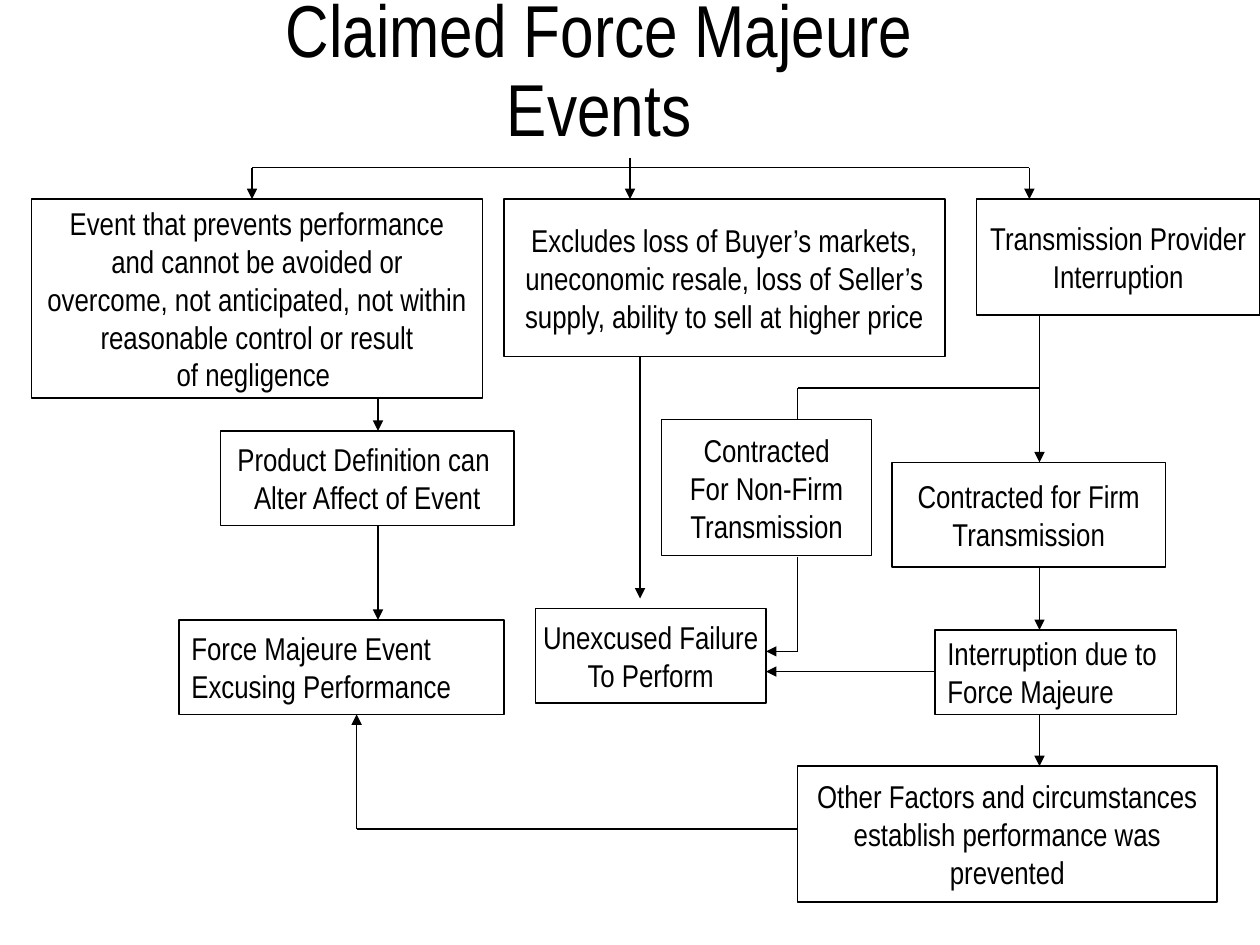
from dataclasses import dataclass

import lxml.etree
import pptx
import pptx.dml.color
import pptx.enum.shapes
import pptx.enum.text
import pptx.oxml.ns
import pptx.util
from pptx.util import Inches

Align = pptx.enum.text.PP_ALIGN


@dataclass(frozen=True)
class Theme:
    font: str = "Arial Narrow"
    ink: pptx.dml.color.RGBColor = pptx.dml.color.RGBColor(0, 0, 0)
    paper: pptx.dml.color.RGBColor = pptx.dml.color.RGBColor(255, 255, 255)
    title_size: float = 42
    body_size: float = 18
    line_width: float = 0.75


@dataclass(frozen=True)
class Box:
    left: float
    top: float
    width: float
    height: float
    paragraphs: tuple[str, ...]
    alignment: Align = Align.CENTER


@dataclass(frozen=True)
class Route:
    points: tuple[tuple[float, float], ...]
    arrow: bool = True


THEME = Theme()

BOXES = (
    Box(0.25, 1.58, 3.58, 1.58, (
        "Event that prevents performance",
        "and cannot be avoided or",
        "overcome, not anticipated, not within",
        "reasonable control or result",
        "of negligence ",
    )),
    Box(4, 1.58, 3.5, 1.25, (
        "Excludes loss of Buyer’s markets,",
        "uneconomic resale, loss of Seller’s",
        "supply, ability to sell at higher price",
    )),
    Box(7.75, 1.58, 2.25, 0.92, ("Transmission Provider", "Interruption")),
    Box(1.75, 3.42, 2.33, 0.75, ("Product Definition can ", "Alter Affect of Event")),
    Box(4.25, 4.83, 1.83, 0.75, ("Unexcused Failure", "To Perform")),
    Box(1.42, 4.92, 2.58, 0.75, ("Force Majeure Event", "Excusing Performance"), Align.LEFT),
    Box(7.42, 5, 1.92, 0.67, ("Interruption due to", "Force Majeure"), Align.LEFT),
    Box(7.08, 3.67, 2.17, 0.83, ("Contracted for Firm", "Transmission")),
    Box(6.33, 6.08, 3.33, 1.08, (
        "Other Factors and circumstances\nestablish performance was",
        "prevented",
    )),
    Box(5.25, 3.33, 1.67, 1.08, ("Contracted", "For Non-Firm", "Transmission")),
)

ROUTES = (
    Route(((5, 1.33), (2, 1.33), (2, 1.58))),
    Route(((5, 1.33), (8.17, 1.33), (8.17, 1.58))),
    Route(((5, 1.25), (5, 1.58))),
    Route(((3, 3.17), (3, 3.42))),
    Route(((3, 4.17), (3, 4.92))),
    Route(((5.08, 2.83), (5.08, 4.75))),
    Route(((8.25, 2.5), (8.25, 3.67))),
    Route(((8.25, 3.08), (6.33, 3.08), (6.33, 3.33)), arrow=False),
    Route(((6.33, 4.42), (6.33, 5.17), (6.08, 5.17))),
    Route(((8.25, 4.5), (8.25, 5))),
    Route(((7.42, 5.33), (6.08, 5.33))),
    Route(((8.25, 5.67), (8.25, 6.08))),
    Route(((6.33, 6.58), (2.83, 6.58), (2.83, 5.67))),
)


def write_paragraph(paragraph, text: str, size: float, alignment: Align) -> None:
    paragraph.alignment = alignment
    for index, line in enumerate(text.split("\n")):
        if index:
            paragraph.add_line_break()
        run = paragraph.add_run()
        run.text = line
        run.font.name = THEME.font
        run.font.size = pptx.util.Pt(size)
        run.font.color.rgb = THEME.ink


def prepare_frame(text_frame) -> None:
    text_frame.word_wrap = False
    text_frame.auto_size = pptx.enum.text.MSO_AUTO_SIZE.NONE
    text_frame.vertical_anchor = pptx.enum.text.MSO_ANCHOR.MIDDLE


def add_title(slide, text: str) -> None:
    title = slide.shapes.title
    title.left, title.top = Inches(1.42), Inches(0.08)
    title.width, title.height = Inches(6.67), Inches(1)
    prepare_frame(title.text_frame)
    paragraph = title.text_frame.paragraphs[0]
    paragraph.line_spacing = 0.9
    write_paragraph(paragraph, text, THEME.title_size, Align.CENTER)


def add_box(slide, box: Box) -> None:
    shape = slide.shapes.add_shape(
        pptx.enum.shapes.MSO_SHAPE.RECTANGLE,
        Inches(box.left), Inches(box.top), Inches(box.width), Inches(box.height),
    )
    shape.shadow.inherit = False
    shape.fill.solid()
    shape.fill.fore_color.rgb = THEME.paper
    shape.line.color.rgb = THEME.ink
    shape.line.width = pptx.util.Pt(THEME.line_width)
    text_frame = shape.text_frame
    prepare_frame(text_frame)
    for index, text in enumerate(box.paragraphs):
        paragraph = text_frame.add_paragraph() if index else text_frame.paragraphs[0]
        write_paragraph(paragraph, text, THEME.body_size, box.alignment)


def add_route(slide, route: Route) -> None:
    for start, end in zip(route.points, route.points[1:]):
        connector = slide.shapes.add_connector(
            pptx.enum.shapes.MSO_CONNECTOR.STRAIGHT,
            *(Inches(value) for value in start + end),
        )
        connector.line.color.rgb = THEME.ink
        connector.line.width = pptx.util.Pt(THEME.line_width)
        properties = connector._element.spPr
        lxml.etree.SubElement(properties, pptx.oxml.ns.qn("a:effectLst"))
        if route.arrow and end == route.points[-1]:
            outline = properties.find(pptx.oxml.ns.qn("a:ln"))
            lxml.etree.SubElement(outline, pptx.oxml.ns.qn("a:tailEnd"), type="triangle")


def main() -> None:
    presentation = pptx.Presentation()
    presentation.slide_width = Inches(10)
    presentation.slide_height = Inches(7.5)
    slide = presentation.slides.add_slide(presentation.slide_layouts.get_by_name("Title Only"))
    add_title(slide, "Claimed Force Majeure Events")
    for route in ROUTES:
        add_route(slide, route)
    for box in BOXES:
        add_box(slide, box)
    presentation.save("out.pptx")


if __name__ == "__main__":
    main()
